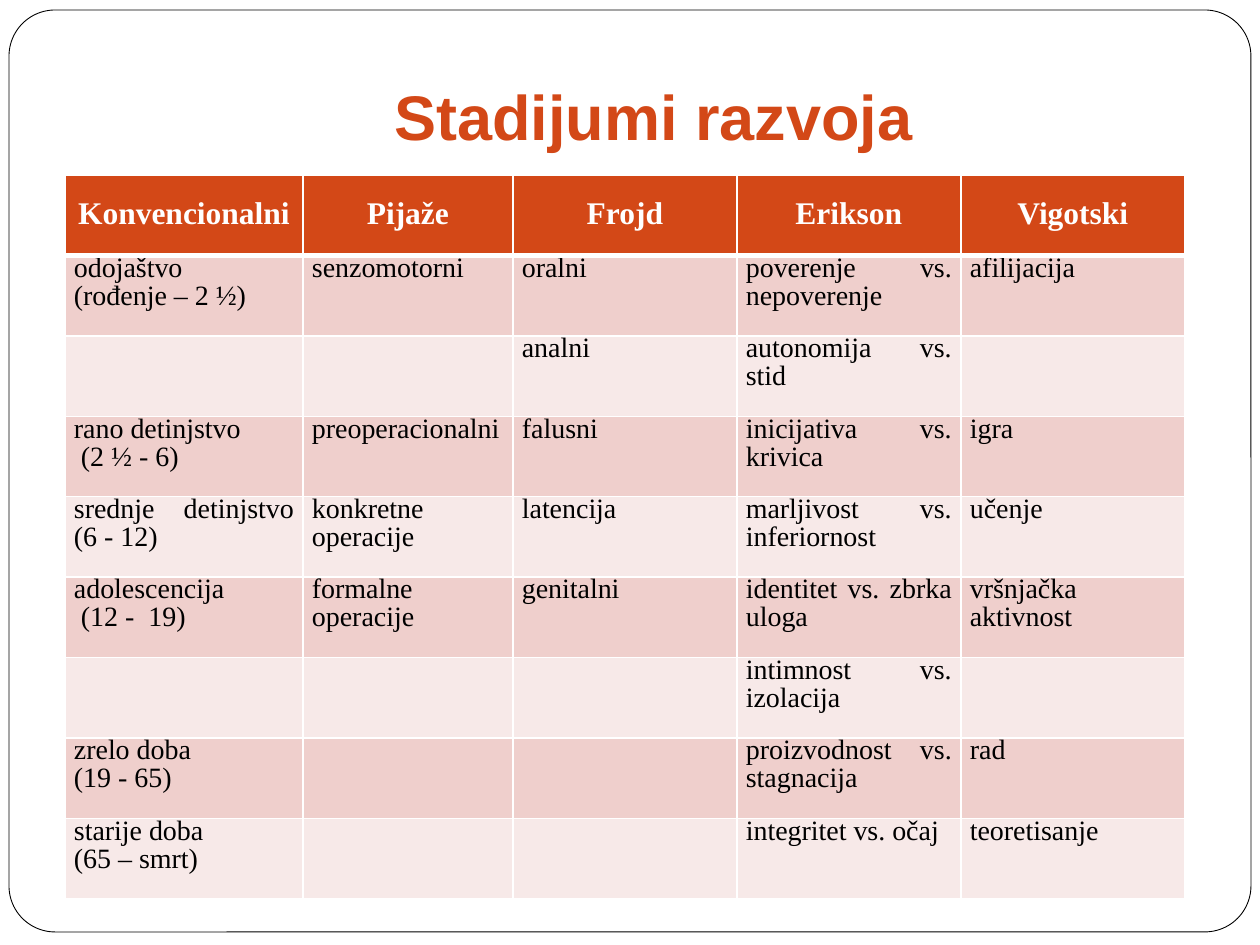
from pptx import Presentation, util as u
from pptx.dml.color import RGBColor
from pptx.enum import shapes, text
from pptx.oxml import parse_xml
from pptx.oxml.ns import nsdecls

PX = 914400 // 126
COLORS = {"head": "D34817", "odd": "EFCFCC", "even": "F7E9E8",
          "white": "FFFFFF", "black": "000000"}
SERIF = "Times New Roman"


def rgb(name):
    return RGBColor.from_string(COLORS[name])


def edge(cell, side, width):
    cell._tc.get_or_add_tcPr().append(parse_xml(
        f'<a:{side} {nsdecls("a")} w="{u.Pt(width)}"><a:solidFill>'
        f'<a:srgbClr val="{COLORS["white"]}"/></a:solidFill></a:{side}>'))


deck = Presentation()
deck.slide_width, deck.slide_height = 1260 * PX, 945 * PX
slide = deck.slides.add_slide(deck.slide_layouts[5])

# Rounded frame, behind the title
frame = slide.shapes.add_shape(shapes.MSO_SHAPE.ROUNDED_RECTANGLE,
                               9 * PX, 10 * PX, 1242 * PX, 922 * PX)
frame.adjustments[0] = 0.05
frame.shadow.inherit = False
frame.fill.solid()
frame.fill.fore_color.rgb = rgb("white")
frame.line.color.rgb = rgb("black")
frame.line.width = u.Pt(0.5)
slide.shapes._spTree.insert(2, frame._element)

# Title
title = slide.shapes.title
title.left, title.top, title.width, title.height = 118 * PX, 39 * PX, 1071 * PX, 126 * PX
box = title.text_frame
box.text = "Stadijumi razvoja"
box.auto_size = text.MSO_AUTO_SIZE.NONE
box.vertical_anchor = text.MSO_ANCHOR.BOTTOM
box.margin_bottom = 12 * PX
line = box.paragraphs[0]
line.alignment = text.PP_ALIGN.CENTER
font = line.runs[0].font
font.name, font.size, font.bold = "Arial", u.Pt(36), True
font.color.rgb = rgb("head")

# Stages of development by author
ROWS = [
    ["Konvencionalni", "Pijaže", "Frojd", "Erikson", "Vigotski"],
    ["odojaštvo\n(rođenje – 2 ½)", "senzomotorni", "oralni",
     "poverenje vs. nepoverenje", "afilijacija"],
    ["", "", "analni", "autonomija vs. stid", ""],
    ["rano detinjstvo\n (2 ½ - 6)", "preoperacionalni", "falusni",
     "inicijativa vs. krivica", "igra"],
    ["srednje detinjstvo (6 - 12)", "konkretne operacije", "latencija",
     "marljivost vs. inferiornost", "učenje"],
    ["adolescencija\n (12 -  19)", "formalne operacije", "genitalni",
     "identitet vs. zbrka uloga", "vršnjačka aktivnost"],
    ["", "", "", "intimnost vs. izolacija", ""],
    ["zrelo doba\n(19 - 65)", "", "", "proizvodnost vs. stagnacija", "rad"],
    ["starije doba\n(65 – smrt)", "", "", "integritet vs. očaj", "teoretisanje"],
]
WIDTHS = [238, 210, 224, 224, 224]
table = slide.shapes.add_table(len(ROWS), len(WIDTHS), 65 * PX, 175 * PX,
                               sum(WIDTHS) * PX, 724 * PX).table
for col, width in zip(table.columns, WIDTHS):
    col.width = width * PX

for r, row in enumerate(ROWS):
    head = r == 0
    size = u.Pt(18 if head else 16)
    for c, words in enumerate(row):
        cell = table.cell(r, c)
        cell.margin_left = cell.margin_right = 9 * PX
        cell.margin_top = cell.margin_bottom = 0
        cell.vertical_anchor = text.MSO_ANCHOR.MIDDLE if head else text.MSO_ANCHOR.TOP
        # Borders come before the fill in the cell properties
        for side in ("lnL", "lnR", "lnT", "lnB"):
            thick = (head and side == "lnB") or (r == 1 and side == "lnT")
            edge(cell, side, 3 if thick else 1)
        cell.fill.solid()
        cell.fill.fore_color.rgb = rgb("head" if head else "odd" if r % 2 else "even")
        cell.text_frame.text = words
        for line in cell.text_frame.paragraphs:
            line.alignment = text.PP_ALIGN.CENTER if head else text.PP_ALIGN.JUSTIFY
            line.line_spacing = size
            for run in line.runs:
                font = run.font
                font.name, font.size, font.bold = SERIF, size, head
                font.color.rgb = rgb("white" if head else "black")

deck.save("out.pptx")
